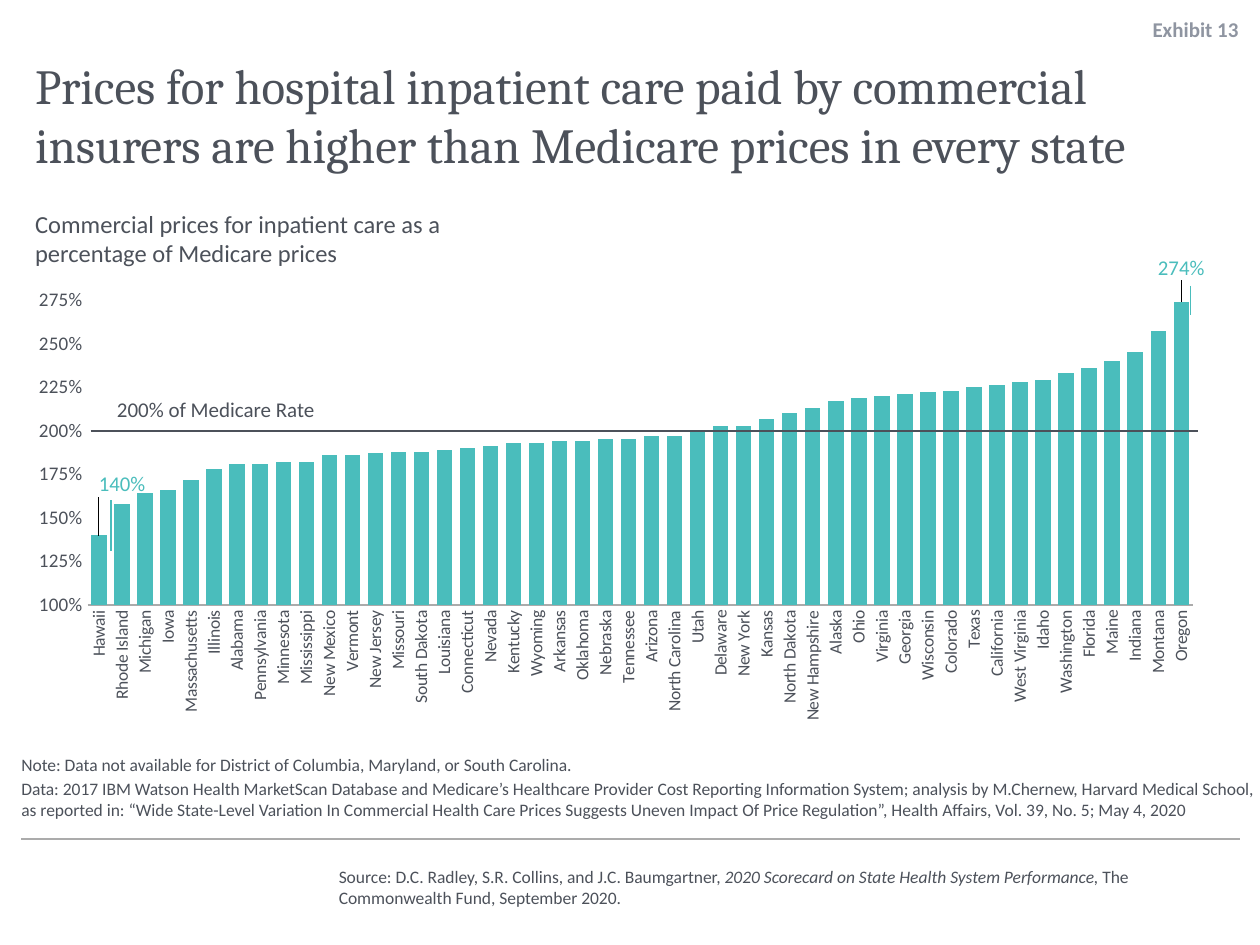
from lxml.etree import SubElement
from pptx import Presentation
from pptx.chart.data import CategoryChartData
from pptx.dml.color import RGBColor
from pptx.enum.chart import XL_CHART_TYPE, XL_LABEL_POSITION, XL_TICK_MARK
from pptx.enum.shapes import MSO_CONNECTOR
from pptx.enum.text import MSO_ANCHOR, PP_ALIGN
from pptx.oxml import parse_xml
from pptx.oxml.ns import nsdecls, qn
from pptx.util import Inches, Pt

INK, TEAL, GRAY, RULE = "4C515A", "4ABDBC", "8F95A1", "ABABAB"

# Commercial price as a multiple of the Medicare price
STATE_PRICES = {
    "Hawaii": 1.4, "Rhode Island": 1.58, "Michigan": 1.64, "Iowa": 1.66,
    "Massachusetts": 1.72, "Illinois": 1.78, "Alabama": 1.81, "Pennsylvania": 1.81,
    "Minnesota": 1.82, "Mississippi": 1.82, "New Mexico": 1.86, "Vermont": 1.86,
    "New Jersey": 1.87, "Missouri": 1.88, "South Dakota": 1.88, "Louisiana": 1.89,
    "Connecticut": 1.9, "Nevada": 1.91, "Kentucky": 1.93, "Wyoming": 1.93,
    "Arkansas": 1.94, "Oklahoma": 1.94, "Nebraska": 1.95, "Tennessee": 1.95,
    "Arizona": 1.97, "North Carolina": 1.97, "Utah": 2, "Delaware": 2.03,
    "New York": 2.03, "Kansas": 2.07, "North Dakota": 2.1, "New Hampshire": 2.13,
    "Alaska": 2.17, "Ohio": 2.19, "Virginia": 2.2, "Georgia": 2.21,
    "Wisconsin": 2.22, "Colorado": 2.23, "Texas": 2.25, "California": 2.26,
    "West Virginia": 2.28, "Idaho": 2.29, "Washington": 2.33, "Florida": 2.36,
    "Maine": 2.4, "Indiana": 2.45, "Montana": 2.57, "Oregon": 2.74,
}


def rgb(color):
    return RGBColor.from_string(color)


def style_font(font, size, color=INK, name="Calibri", bold=False):
    font.size, font.name, font.bold = Pt(size), name, bold
    font.color.rgb = rgb(color)


def add_text(slide, box, paragraphs, size, color=INK, name="Calibri", bold=False,
             anchor=MSO_ANCHOR.TOP, align=PP_ALIGN.LEFT, inset=True):
    frame = slide.shapes.add_textbox(*map(Inches, box)).text_frame
    frame.word_wrap = True
    frame.vertical_anchor = anchor
    if not inset:
        frame.margin_left = frame.margin_right = 0
        frame.margin_top = frame.margin_bottom = 0
    for index, text in enumerate(paragraphs):
        paragraph = frame.add_paragraph() if index else frame.paragraphs[0]
        paragraph.text = text
        paragraph.alignment = align
        paragraph.space_before = Pt(2 if index else 0)
        for run in paragraph.runs:
            style_font(run.font, size, color, name, bold)
    return frame


def add_line(slide, start, end, color, width=0.75):
    line = slide.shapes.add_connector(
        MSO_CONNECTOR.STRAIGHT, *map(Inches, (*start, *end)))
    line.line.color.rgb = rgb(color)
    line.line.width = Pt(width)
    SubElement(line._element.spPr, qn("a:effectLst"))


def manual_layout(x, y, inner_size=None):
    parts = [("x", x), ("y", y)]
    if inner_size:
        parts = [("layoutTarget", "inner"), ("xMode", "edge"), ("yMode", "edge"),
                 *parts, ("w", inner_size[0]), ("h", inner_size[1])]
    body = "".join(f'<c:{tag} val="{value}"/>' for tag, value in parts)
    return parse_xml(f'<c:layout {nsdecls("c")}><c:manualLayout>{body}'
                     '</c:manualLayout></c:layout>')


def label_bar(series, index, shift):
    label = series.points[index].data_label
    style_font(label.font, 12, TEAL)
    label.position = XL_LABEL_POSITION.OUTSIDE_END
    label_xml = series.data_labels._element.findall(qn("c:dLbl"))[-1]
    label_xml.insert(1, manual_layout(*shift))


def add_price_chart(slide):
    data = CategoryChartData(number_format="0%")
    data.categories = list(STATE_PRICES)
    data.add_series("Series 1", list(STATE_PRICES.values()))
    chart = slide.shapes.add_chart(
        XL_CHART_TYPE.COLUMN_CLUSTERED,
        *map(Inches, (0.29, 1.85, 9.27, 4.4)), data).chart
    chart.has_legend = chart.has_title = False
    style_font(chart.font, 18)

    # Plot area
    plot_area = chart._chartSpace.chart.plotArea
    for layout in plot_area.findall(qn("c:layout")):
        plot_area.remove(layout)
    plot_area.insert(0, manual_layout(0.044, 0.121, (0.955, 0.55)))

    # State names, turned upwards
    states = chart.category_axis
    states.major_tick_mark = XL_TICK_MARK.NONE
    states.format.line.color.rgb = rgb(RULE)
    style_font(states.tick_labels.font, 10)
    turned = states._element.find(qn("c:txPr")).find(qn("a:bodyPr"))
    turned.set("rot", "-5400000")
    turned.set("vert", "horz")

    # Percentage scale
    scale = chart.value_axis
    scale.minimum_scale, scale.maximum_scale, scale.major_unit = 1, 2.75, 0.25
    scale.has_major_gridlines = False
    scale.major_tick_mark = XL_TICK_MARK.NONE
    scale.format.line.fill.background()
    scale.tick_labels.number_format = "0%"
    scale.tick_labels.number_format_is_linked = False
    style_font(scale.tick_labels.font, 11)

    # Bars, with the lowest and highest labelled
    plot = chart.plots[0]
    plot.gap_width = 50
    plot.vary_by_categories = False
    prices = plot.series[0]
    prices.format.fill.solid()
    prices.format.fill.fore_color.rgb = rgb(TEAL)
    prices.data_labels.show_value = False
    label_bar(prices, 0, (0.02, -0.06))
    label_bar(prices, len(STATE_PRICES) - 1, (0, -0.03))


def main():
    deck = Presentation()
    deck.slide_width, deck.slide_height = Inches(10), Inches(7.5)
    slide = deck.slides.add_slide(deck.slide_layouts[6])

    # Heading
    add_text(slide, (7.96, 0.07, 1.87, 0.33), ["Exhibit 13"], 12, GRAY, bold=True,
             anchor=MSO_ANCHOR.MIDDLE, align=PP_ALIGN.RIGHT, inset=False)
    add_text(slide, (0.18, 0.39, 9.67, 1.04),
             ["Prices for hospital inpatient care paid by commercial insurers "
              "are higher than Medicare prices in every state"], 28, name="Cambria")

    # Chart with its caption and reference line
    add_price_chart(slide)
    add_text(slide, (0.18, 1.61, 4.02, 0.57),
             ["Commercial prices for inpatient care as a percentage of Medicare prices"],
             14)
    add_line(slide, (0.72, 3.42), (9.51, 3.42), INK, 1.5)
    add_text(slide, (0.83, 3.1, 2.64, 0.3), ["200% of Medicare Rate"], 12)

    # Pointers to the labelled bars
    add_line(slide, (0.88, 3.97), (0.88, 4.37), TEAL)
    add_line(slide, (9.45, 2.27), (9.45, 2.5), TEAL)

    # Notes and source
    add_text(slide, (0.17, 6.07, 9.83, 0.44), [
        "Note: Data not available for District of Columbia, Maryland, or South Carolina.",
        "Data: 2017 IBM Watson Health MarketScan Database and Medicare’s Healthcare "
        "Provider Cost Reporting Information System; analysis by M.Chernew, Harvard "
        "Medical School, as reported in: “Wide State-Level Variation In Commercial "
        "Health Care Prices Suggests Uneven Impact Of Price Regulation”, Health "
        "Affairs, Vol. 39, No. 5; May 4, 2020",
    ], 10, anchor=MSO_ANCHOR.BOTTOM, inset=False)
    add_line(slide, (9.84, 6.66), (0.17, 6.66), RULE)
    source = add_text(slide, (2.59, 6.82, 7.25, 0.44),
                      ["Source: D.C. Radley, S.R. Collins, and J.C. Baumgartner, "],
                      10, anchor=MSO_ANCHOR.MIDDLE).paragraphs[0]
    for text, italic in (("2020 Scorecard on State Health System Performance, ", True),
                         ("The Commonwealth Fund, September 2020.", False)):
        run = source.add_run()
        run.text = text
        style_font(run.font, 10)
        run.font.italic = italic

    deck.save("out.pptx")


if __name__ == "__main__":
    main()
